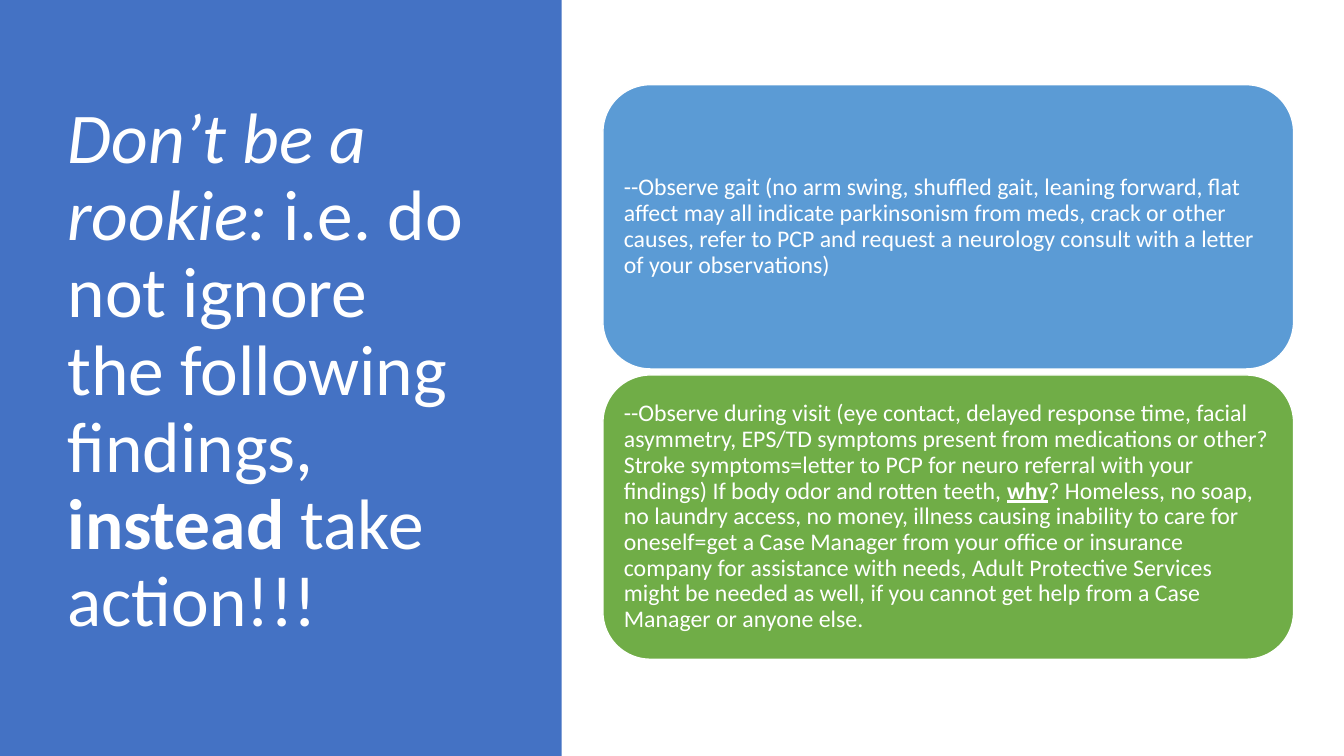
"""Build the slide on findings that call for action."""
from typing import NamedTuple

from pptx import Presentation
from pptx import util as u
from pptx.dml.color import RGBColor
from pptx.enum import shapes, text

WHITE = RGBColor(0xFF, 0xFF, 0xFF)
PANEL_BLUE = RGBColor(0x44, 0x72, 0xC4)
GAIT_BLUE = RGBColor(0x5B, 0x9B, 0xD5)
VISIT_GREEN = RGBColor(0x70, 0xAD, 0x47)

SLIDE_WIDTH, SLIDE_HEIGHT = u.Inches(13.33), u.Inches(7.5)
ROWS = 90
CELL = SLIDE_HEIGHT / ROWS
CARD_LEFT, CARD_TOP = 71.76, 10.08
CARD_WIDTH, CARD_HEIGHT, CARD_GAP = 82.2, 33.84, 0.72


class Box(NamedTuple):
    """A rectangle in columns and rows of the square grid."""
    left: float
    top: float
    width: float
    height: float

    def emu(self) -> list[u.Emu]:
        """Return the rectangle in slide units."""
        return [u.Emu(round(cells * CELL)) for cells in self]


class Phrase(NamedTuple):
    """A stretch of wording with its emphasis."""
    wording: str
    bold: bool = False
    italic: bool = False
    underline: bool = False


class Card(NamedTuple):
    """A rounded card holding one piece of advice."""
    fill: RGBColor
    phrases: list[Phrase]


HEADLINE = [
    Phrase("Don’t be a rookie: ", italic=True),
    Phrase("i.e. do not ignore the following findings, "),
    Phrase("instead ", bold=True),
    Phrase("take action!!!"),
]

CARDS = [
    Card(GAIT_BLUE, [Phrase(
        "--Observe gait (no arm swing, shuffled gait, leaning forward, flat affect "
        "may all indicate parkinsonism from meds, crack or other causes, refer to "
        "PCP and request a neurology consult with a letter of your observations)")]),
    Card(VISIT_GREEN, [
        Phrase(
            "--Observe during visit (eye contact, delayed response time, facial "
            "asymmetry, EPS/TD symptoms present from medications or other? Stroke "
            "symptoms=letter to PCP for neuro referral with your findings) If body "
            "odor and rotten teeth, "),
        Phrase("why", bold=True, underline=True),
        Phrase(
            "? Homeless, no soap, no laundry access, no money, illness causing "
            "inability to care for oneself=get a Case Manager from your office or "
            "insurance company for assistance with needs, Adult Protective Services "
            "might be needed as well, if you cannot get help from a Case Manager or "
            "anyone else."),
    ]),
]


def write(holder, phrases: list[Phrase], size: float) -> None:
    """Fill a shape with one left-aligned, vertically centred paragraph."""
    frame = holder.text_frame
    frame.word_wrap = True
    frame.auto_size = text.MSO_AUTO_SIZE.NONE
    frame.vertical_anchor = text.MSO_ANCHOR.MIDDLE
    paragraph = frame.paragraphs[0]
    paragraph.alignment = text.PP_ALIGN.LEFT
    paragraph.line_spacing = 0.9
    for phrase in phrases:
        run = paragraph.add_run()
        run.text = phrase.wording
        font = run.font
        font.name, font.size = "Calibri", u.Pt(size)
        font.color.rgb = WHITE
        font.bold, font.italic = phrase.bold, phrase.italic
        font.underline = phrase.underline


def add_block(slide, kind: shapes.MSO_SHAPE, box: Box, fill: RGBColor):
    """Add a flat filled shape without an outline."""
    block = slide.shapes.add_shape(kind, *box.emu())
    block.shadow.inherit = False
    block.fill.solid()
    block.fill.fore_color.rgb = fill
    block.line.fill.background()
    return block


def add_card(slide, card: Card, index: int) -> None:
    """Add a card at its place in the column."""
    top = CARD_TOP + index * (CARD_HEIGHT + CARD_GAP)
    box = Box(CARD_LEFT, top, CARD_WIDTH, CARD_HEIGHT)
    advice = add_block(slide, shapes.MSO_SHAPE.ROUNDED_RECTANGLE, box, card.fill)
    advice.line.color.rgb = WHITE
    advice.line.width = u.Pt(1)
    frame = advice.text_frame
    frame.margin_left = frame.margin_right = u.Inches(0.07)
    frame.margin_top = frame.margin_bottom = u.Inches(0.07)
    write(advice, card.phrases, 17)


def main() -> None:
    """Build and save the presentation."""
    deck = Presentation()
    deck.slide_width, deck.slide_height = SLIDE_WIDTH, SLIDE_HEIGHT
    slide = deck.slides.add_slide(deck.slide_layouts[5])

    headline = slide.shapes.title
    headline.left, headline.top, headline.width, headline.height = Box(
        6.84, 8.16, 49.92, 72.24).emu()
    write(headline, HEADLINE, 51)

    panel = add_block(slide, shapes.MSO_SHAPE.RECTANGLE,
                      Box(0, 0, 66.84, ROWS), PANEL_BLUE)
    headline.element.addprevious(panel.element)

    for index, card in enumerate(CARDS):
        add_card(slide, card, index)
    deck.save("out.pptx")


if __name__ == "__main__":
    main()
